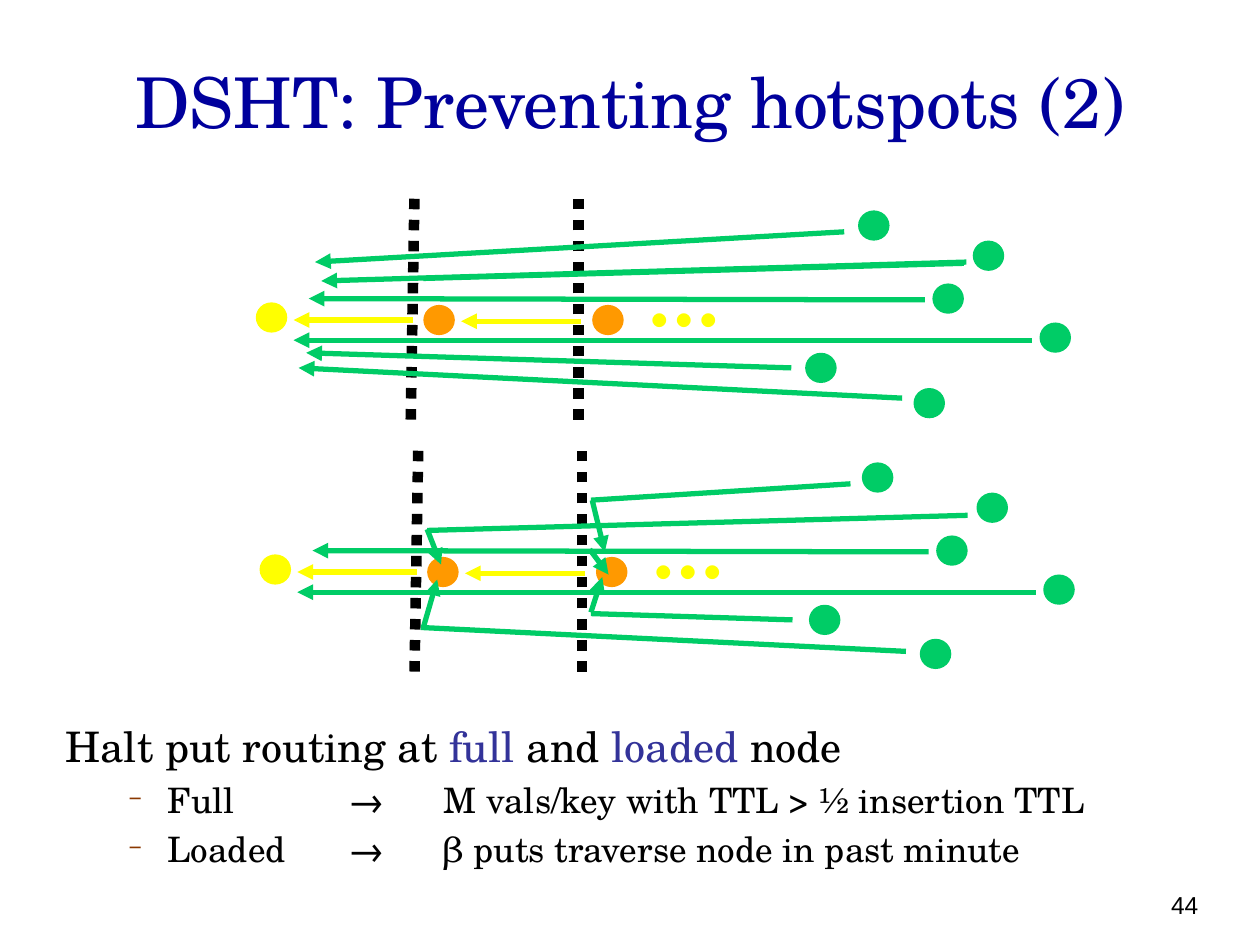
"""Build the slide on preventing hotspots in a DSHT."""
from dataclasses import dataclass

import pptx
import pptx.dml.color
import pptx.enum.dml
import pptx.enum.shapes
import pptx.enum.text
import pptx.oxml
import pptx.oxml.ns
import pptx.util
from pptx.util import Inches

SERIF = "TeX Gyre Schola"
BLACK, NAVY, INDIGO, BROWN = "000000", "00009C", "333399", "8A3800"
YELLOW, ORANGE, GREEN = "FFFF00", "FF9900", "00CC66"
Align = pptx.enum.text.PP_ALIGN
Anchor = pptx.enum.text.MSO_ANCHOR


@dataclass(frozen=True)
class Node:
    left: float
    top: float
    color: str = GREEN


@dataclass(frozen=True)
class Link:
    start: tuple[float, float]
    end: tuple[float, float]
    color: str = GREEN
    arrow: bool = True
    width: float = 3
    dotted: bool = False


@dataclass(frozen=True)
class Panel:
    dx: float
    dy: float
    last_node: Node
    puts: tuple[Link, ...]


NODES = (
    Node(2.03, 2.4, YELLOW), Node(3.36, 2.42, ORANGE), Node(4.7, 2.42, ORANGE),
    Node(6.81, 1.67), Node(7.72, 1.91), Node(7.4, 2.25), Node(8.25, 2.56), Node(6.39, 2.8),
)
SHARED_LINKS = (
    Link((3.28, 2.54), (2.33, 2.54), YELLOW),
    Link((4.61, 2.55), (3.66, 2.55), YELLOW),
    Link((3.26, 3.33), (3.29, 1.53), BLACK, False, 6, True),
    Link((4.59, 3.33), (4.59, 1.55), BLACK, False, 6, True),
    Link((8.19, 2.7), (2.33, 2.7)),
    Link((7.34, 2.38), (2.45, 2.37)),
    Link((7.65, 2.09), (3.36, 2.21), arrow=False),
    Link((7.33, 2.38), (4.66, 2.38), arrow=False),
)
PANELS = (
    Panel(0, 0, Node(7.25, 3.08), (
        Link((7.16, 3.16), (2.37, 2.92)),
        Link((6.28, 2.92), (2.43, 2.8)),
        Link((7.67, 2.08), (2.55, 2.23)),
        Link((6.7, 1.84), (2.5, 2.08)),
    )),
    Panel(0.03, 2, Node(7.3, 5.07), (
        Link((3.36, 4.98), (3.47, 4.6)),
        Link((3.39, 4.2), (3.5, 4.48)),
        Link((4.69, 4.86), (4.78, 4.58)),
        Link((4.7, 3.97), (4.8, 4.38)),
        Link((4.68, 4.36), (4.83, 4.56)),
        Link((6.75, 3.84), (4.69, 3.97), arrow=False),
        Link((6.29, 4.92), (4.69, 4.87), arrow=False),
        Link((7.19, 5.17), (3.34, 4.98), arrow=False),
    )),
)
HEADLINE = (("Halt put routing at ", BLACK), ("full ", INDIGO), ("and ", BLACK),
            ("loaded", INDIGO), (" node", BLACK))
CONDITIONS = (
    ("Full \t", "→", " \tM vals/key with TTL > ½ insertion TTL"),
    ("Loaded \t", "→ \t", "β puts traverse node in past minute"),
)


def rgb(color: str) -> pptx.dml.color.RGBColor:
    """Turn a hex string into a colour."""
    return pptx.dml.color.RGBColor.from_string(color)


def add_xml(parent, tag: str, **attributes):
    """Append a DrawingML element and return it."""
    element = parent.makeelement(pptx.oxml.ns.qn(tag), attributes)
    parent.append(element)
    return element


def style(run, size: float, color: str, font: str = SERIF) -> None:
    """Set the font of a run."""
    run.font.name = font
    run.font.size = pptx.util.Pt(size)
    run.font.color.rgb = rgb(color)


def place(shape, left: float, top: float, width: float, height: float) -> None:
    """Move and size a shape in inches."""
    shape.left, shape.top = Inches(left), Inches(top)
    shape.width, shape.height = Inches(width), Inches(height)


def draw_node(slide, node: Node, dx: float = 0, dy: float = 0) -> None:
    """Draw one node as a plain disc."""
    disc = slide.shapes.add_shape(
        pptx.enum.shapes.MSO_SHAPE.OVAL,
        Inches(node.left + dx), Inches(node.top + dy), Inches(0.25), Inches(0.24))
    disc.shadow.inherit = False
    disc.fill.solid()
    disc.fill.fore_color.rgb = rgb(node.color)
    disc.line.fill.background()


def draw_link(slide, link: Link, dx: float = 0, dy: float = 0) -> None:
    """Draw one link or divider."""
    (x1, y1), (x2, y2) = link.start, link.end
    line = slide.shapes.add_connector(
        pptx.enum.shapes.MSO_CONNECTOR.STRAIGHT,
        Inches(x1 + dx), Inches(y1 + dy), Inches(x2 + dx), Inches(y2 + dy))
    line.line.color.rgb = rgb(link.color)
    line.line.width = pptx.util.Pt(link.width)
    if link.dotted:
        line.line.dash_style = pptx.enum.dml.MSO_LINE.ROUND_DOT
    if link.arrow:
        add_xml(line.line._get_or_add_ln(), "a:tailEnd", type="triangle")
    add_xml(line._element.spPr, "a:effectLst")


def draw_panel(slide, panel: Panel) -> None:
    """Draw one routing diagram."""
    for node in NODES:
        draw_node(slide, node, panel.dx, panel.dy)
    draw_node(slide, panel.last_node)
    more = slide.shapes.add_textbox(
        Inches(5.04 + panel.dx), Inches(1.96 + panel.dy), Inches(0.78), Inches(0.8))
    more.text_frame.word_wrap = False
    more.text_frame.text = "…"
    ellipsis = more.text_frame.paragraphs[0].runs[0]
    style(ellipsis, 42, YELLOW)
    ellipsis.font.bold = True
    for link in SHARED_LINKS:
        draw_link(slide, link, panel.dx, panel.dy)
    for link in panel.puts:
        draw_link(slide, link)


def format_paragraph(paragraph, margin: float, hanging: float, space: float,
                     bullet: str = "") -> None:
    """Set indent, spacing, bullet and tab stops of a paragraph."""
    paragraph.space_before = pptx.util.Pt(space)
    properties = paragraph._p.get_or_add_pPr()
    properties.set("marL", str(Inches(margin)))
    properties.set("indent", str(-Inches(hanging)))
    if bullet:
        add_xml(add_xml(properties, "a:buClr"), "a:srgbClr", val=BROWN)
        add_xml(properties, "a:buSzPct", val="65000")
        add_xml(properties, "a:buChar", char=bullet)
    else:
        add_xml(properties, "a:buNone")
    stops = add_xml(properties, "a:tabLst")
    for position in (2.25, 2.56):
        add_xml(stops, "a:tab", pos=str(Inches(position)), algn="l")


def fill_body(body) -> None:
    """Write the rule and its two conditions."""
    place(body, 0.42, 5.67, 9.41, 1.5)
    frame = body.text_frame
    frame.auto_size = pptx.enum.text.MSO_AUTO_SIZE.NONE
    rule = frame.paragraphs[0]
    format_paragraph(rule, 0.38, 0.38, 4.8)
    for words, color in HEADLINE:
        run = rule.add_run()
        run.text = words
        style(run, 24, color)
    for parts in CONDITIONS:
        condition = frame.add_paragraph()
        condition.level = 1
        format_paragraph(condition, 0.81, 0.31, 4, "−")
        for words in parts:
            run = condition.add_run()
            run.text = words
            style(run, 20, BLACK)
            run.font.italic = "→" in words


def main() -> None:
    """Build and save the slide."""
    deck = pptx.Presentation()
    deck.slide_width, deck.slide_height = Inches(10), Inches(7.5)
    slide = deck.slides.add_slide(deck.slide_layouts[1])
    title = slide.shapes.title
    place(title, 0.5, 0.32, 9, 0.95)
    title.text_frame.text = "DSHT: Preventing hotspots (2)"
    title.text_frame.vertical_anchor = Anchor.MIDDLE
    title.text_frame.paragraphs[0].alignment = Align.CENTER
    style(title.text_frame.paragraphs[0].runs[0], 40, NAVY)
    fill_body(slide.placeholders[1])
    for panel in PANELS:
        draw_panel(slide, panel)
    number = slide.shapes.add_textbox(Inches(7.28), Inches(6.83), Inches(2.33), Inches(0.52))
    number.text_frame.word_wrap = True
    number.text_frame.vertical_anchor = Anchor.BOTTOM
    number.text_frame.text = "44"
    number.text_frame.paragraphs[0].alignment = Align.RIGHT
    style(number.text_frame.paragraphs[0].runs[0], 14, BLACK, "Arial")
    deck.save("out.pptx")


if __name__ == "__main__":
    main()
